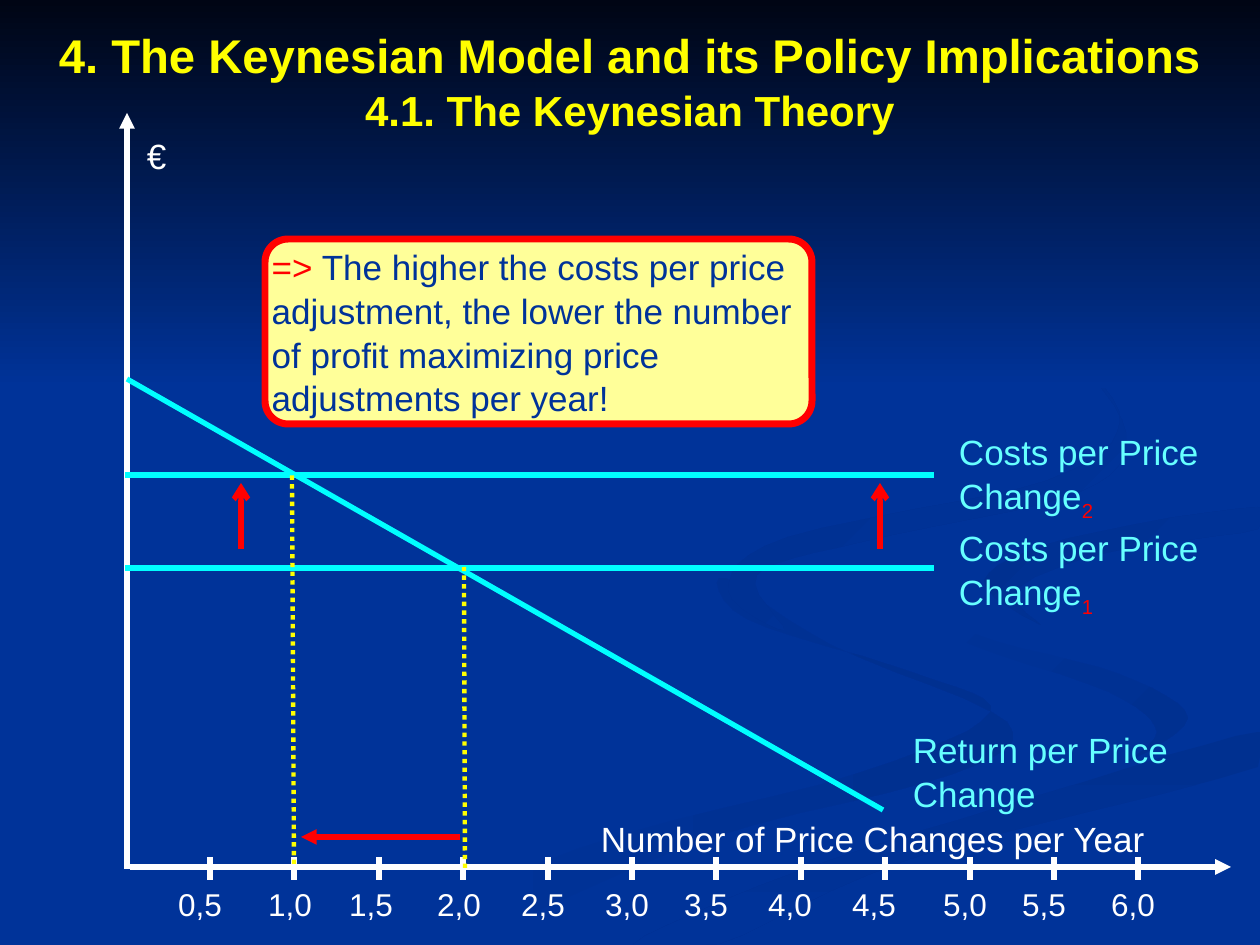
from lxml import etree
from pptx import Presentation
from pptx.dml.color import RGBColor
from pptx.enum.dml import MSO_LINE
from pptx.enum.shapes import MSO_CONNECTOR, MSO_SHAPE
from pptx.enum.text import MSO_ANCHOR, PP_ALIGN
from pptx.oxml.ns import qn
from pptx.util import Pt

EMU_PER_PX = 914400 / 126
WIDTH, HEIGHT = 1260, 945
FONT = "Arial"
LINE_SPACING = 1.04

STRAIGHT = MSO_CONNECTOR.STRAIGHT
RECT, ROUND_RECT = MSO_SHAPE.RECTANGLE, MSO_SHAPE.ROUNDED_RECTANGLE
DOTTED = MSO_LINE.ROUND_DOT
LEFT, CENTER = PP_ALIGN.LEFT, PP_ALIGN.CENTER
TOP, MIDDLE = MSO_ANCHOR.TOP, MSO_ANCHOR.MIDDLE

BLUE = RGBColor(0x00, 0x33, 0x99)
SHADE = RGBColor(0x00, 0x30, 0x90)
NIGHT = RGBColor(0x00, 0x05, 0x14)
WHITE = RGBColor(0xFF, 0xFF, 0xFF)
YELLOW = RGBColor(0xFF, 0xFF, 0x00)
CREAM = RGBColor(0xFF, 0xFF, 0x99)
CYAN = RGBColor(0x00, 0xFF, 0xFF)
PALE_CYAN = RGBColor(0x66, 0xFF, 0xFF)
RED = RGBColor(0xFF, 0x00, 0x00)

# Background ribbons: first colour, last colour, clockwise angle, outline
RIBBONS = [
    (BLUE, SHADE, 0, [
        (833, 646), (725, 578), (747, 619), (917, 674), (990, 713), (862, 772),
        (577, 849), (378, 944), (455, 944), (711, 838), (953, 774), (1007, 722)]),
    (BLUE, SHADE, 45, [
        (1188, 718), (1119, 674), (975, 634), (912, 585), (951, 636),
        (1109, 692), (1157, 732), (1126, 762)]),
    (SHADE, BLUE, 90, [
        (634, 944), (719, 944), (910, 859), (1258, 767), (1258, 732),
        (1047, 793), (794, 873)]),
    (SHADE, BLUE, 45, [
        (984, 580), (1041, 625), (1016, 590), (1106, 553), (1258, 529),
        (1258, 507), (1070, 538)]),
    (SHADE, BLUE, 45, [
        (861, 542), (1077, 493), (1126, 433), (1062, 347), (960, 294),
        (1066, 352), (1120, 422), (1046, 481), (788, 537), (728, 590),
        (784, 630), (757, 575)]),
]
CURVE_STEPS = 6

TICK_START, TICK_STEP = 210, 84.4
TICK_LABEL_CENTERS = [200, 290, 371, 459, 543, 627, 706, 790, 874, 965, 1044, 1133]


def px(*values):
    return [round(v * EMU_PER_PX) for v in values]


def smooth_outline(points):
    """Closed Catmull-Rom curve through the points, kept on the slide."""
    outline = []
    for i, p1 in enumerate(points):
        p0, p2 = points[i - 1], points[(i + 1) % len(points)]
        p3 = points[(i + 2) % len(points)]
        for step in range(CURVE_STEPS):
            t = step / CURVE_STEPS
            x, y = (b + t * (c - a) / 2 + t**2 * (2*a - 5*b + 4*c - d) / 2
                    + t**3 * (3*b - a - 3*c + d) / 2
                    for a, b, c, d in zip(p0, p1, p2, p3))
            outline.append((min(x, WIDTH), min(y, HEIGHT)))
    return outline


def fill_gradient(sp, first, last, angle):
    sp.shadow.inherit = False
    sp.line.fill.background()
    sp.fill.gradient()
    sp.fill.gradient_angle = (360 - angle) % 360
    for stop, color, position in zip(sp.fill.gradient_stops, (first, last), (0, 1)):
        stop.color.rgb = color
        stop.position = position


def add_background(s):
    s.background.fill.solid()
    s.background.fill.fore_color.rgb = BLUE
    for first, last, angle, points in RIBBONS:
        outline = smooth_outline(points)
        builder = s.shapes.build_freeform(*outline[0], scale=EMU_PER_PX)
        builder.add_line_segments(outline[1:], close=True)
        fill_gradient(builder.convert_to_shape(), first, last, angle)
    sky = s.shapes.add_shape(RECT, *px(0, 0, WIDTH, 388))
    fill_gradient(sky, NIGHT, BLUE, 90)


def add_line(s, start, end, color, width=3, dash=None, arrow=None):
    cn = s.shapes.add_connector(STRAIGHT, *px(*start, *end))
    cn.line.color.rgb = color
    cn.line.width = Pt(width)
    if dash:
        cn.line.dash_style = dash
    if arrow:
        etree.SubElement(cn.line._get_or_add_ln(), qn("a:tailEnd"), type=arrow)
    etree.SubElement(cn._element.spPr, qn("a:effectLst"))


def format_frame(tf, inset_x, inset_y, anchor):
    tf.word_wrap = True
    tf.vertical_anchor = anchor
    tf.margin_left = tf.margin_right = px(inset_x)[0]
    tf.margin_top = tf.margin_bottom = px(inset_y)[0]


def format_paragraph(p, size, color, align=LEFT):
    p.alignment = align
    p.line_spacing = LINE_SPACING
    p.font.name = FONT
    p.font.size = Pt(size)
    p.font.color.rgb = color


def add_run(p, text, color=None):
    r = p.add_run()
    r.text = text
    if color is not None:
        r.font.color.rgb = color
    return r


def add_label(s, box, text, color, size=20, align=LEFT, insets=(13, 6), subscript=None):
    tf = s.shapes.add_textbox(*px(*box)).text_frame
    format_frame(tf, *insets, TOP)
    p = tf.paragraphs[0]
    format_paragraph(p, size, color, align)
    add_run(p, text)
    if subscript:
        r = add_run(p, subscript, RED)
        r._r.get_or_add_rPr().set("baseline", "-25000")


def add_title(s):
    title = s.shapes.title
    tree = title.element.getparent()
    tree.append(title.element)  # in front of the background
    title.left, title.top, title.width, title.height = px(0, 4, WIDTH, 151)
    format_frame(title.text_frame, 13, 6, MIDDLE)
    p = title.text_frame.paragraphs[0]
    format_paragraph(p, 27, YELLOW, CENTER)
    p.font.bold = True
    add_run(p, "4. The Keynesian Model and its Policy Implications")
    p.add_line_break()
    add_run(p, "4.1. The Keynesian Theory").font.size = Pt(24)


def add_axes(s):
    add_line(s, (127, 869), (127, 113), WHITE, arrow="triangle")
    add_line(s, (130, 867), (1231, 867), WHITE, arrow="triangle")
    for i, center in enumerate(TICK_LABEL_CENTERS):
        x = round(TICK_START + i * TICK_STEP)
        add_line(s, (x, 857), (x, 880), WHITE)
        value = f"{(i + 1) / 2:.1f}".replace(".", ",")
        add_label(s, (center - 35, 884, 70, 36), value, WHITE, 18, CENTER, (0, 0))
    add_label(s, (134, 127, 50, 54), "€", WHITE)
    add_label(s, (588, 810, 645, 55), "Number of Price Changes per Year", WHITE)


def add_curves(s):
    for y, label_y, index in ((568, 519, "1"), (475, 423, "2")):
        add_line(s, (125, y), (934, y), CYAN)
        add_label(s, (946, label_y, 310, 98), "Costs per Price Change",
                  PALE_CYAN, subscript=index)
    add_line(s, (127, 379), (883, 810), CYAN)
    add_label(s, (900, 721, 287, 98), "Return per Price Change", PALE_CYAN)


def add_shifts(s):
    """Dotted drops to the axis and red arrows for the change."""
    add_line(s, (465, 868), (464, 567), YELLOW, 2.5, DOTTED)
    add_line(s, (294, 864), (292, 475), YELLOW, 2.5, DOTTED)
    for x in (241, 880):
        add_line(s, (x, 549), (x, 483), RED, arrow="arrow")
    add_line(s, (460, 837), (301, 837), RED, arrow="triangle")


def add_callout(s):
    sp = s.shapes.add_shape(ROUND_RECT, *px(265, 239, 547, 185))
    sp.adjustments[0] = 0.125
    sp.shadow.inherit = False
    sp.fill.solid()
    sp.fill.fore_color.rgb = CREAM
    sp.line.color.rgb = RED
    sp.line.width = Pt(4)
    format_frame(sp.text_frame, 0, 0, MIDDLE)
    p = sp.text_frame.paragraphs[0]
    format_paragraph(p, 20, BLUE)
    add_run(p, "=>", RED)
    add_run(p, " The higher the costs per price adjustment, the lower the number "
               "of profit maximizing price adjustments per year!")


def main():
    prs = Presentation()
    prs.slide_width, prs.slide_height = px(WIDTH, HEIGHT)
    s = prs.slides.add_slide(prs.slide_layouts[5])
    for add_part in (add_background, add_title, add_axes, add_curves,
                     add_shifts, add_callout):
        add_part(s)
    prs.save("out.pptx")


if __name__ == "__main__":
    main()
